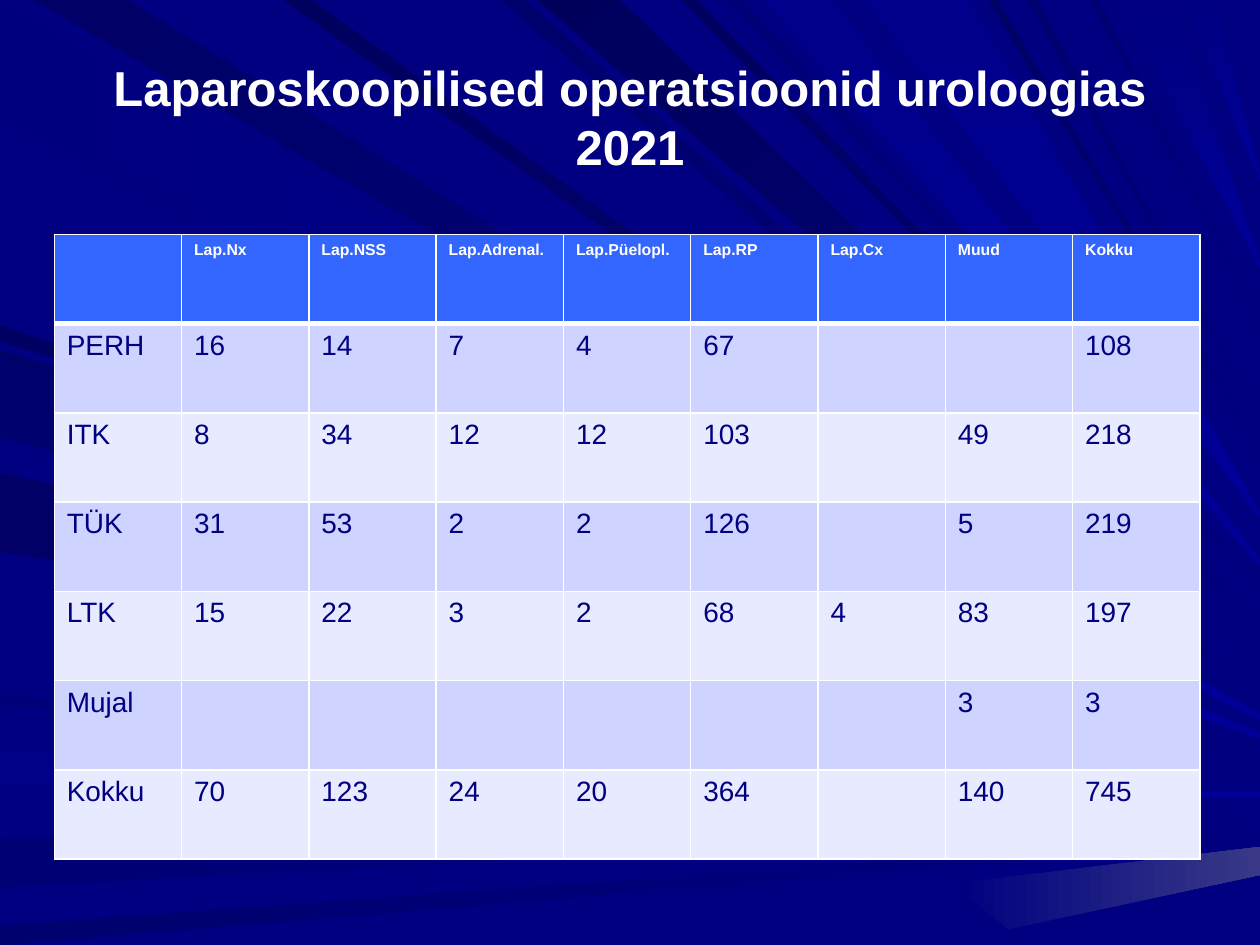
from dataclasses import dataclass
from lxml.etree import SubElement as Sub
from pptx import Presentation
from pptx.dml.color import RGBColor as RGB
from pptx.enum.text import MSO_ANCHOR as Anchor, PP_ALIGN as Align
from pptx.oxml.ns import qn
from pptx.util import Pt


@dataclass(frozen=True)
class Theme:
    font: str = "Arial"
    back: str = "000080"
    light: str = "000099"
    glow: str = "393987"
    white: str = "FFFFFF"
    head: str = "3366FF"
    bands: tuple = ("CED3FF", "E8EAFF")
    title: int = 28
    label: int = 9
    body: int = 16


THEME = Theme()
WIDE, HIGH, TIP = 720, 540, 3

RAYS = [
    ("left", 2, 67, 408, "00007E"),
    ("top", 19, 73, 403, "000067"),
    ("left", 429, 449, 453, "000088"),
    ("left", 479, 507, 465, "000075"),
    ("left", 529, 540, 477, "00006F"),
    ("left", 186, 195, 423, "000062"),
    ("left", 115, 164, 419, "000080"),
    ("top", 286, 300, 372, "00006D"),
    ("top", 307, 354, 354, "00005C"),
    ("top", 389, 398, 332, "000060"),
    ("top", 436, 476, 320, "00008A"),
    ("top", 639, 670, 150, "000080"),
    ("top", 676, 694, 100, "000083"),
    ("left", 200, 246, 430, "000069"),
    ("left", 270, 315, 434, "000067"),
    ("left", 398, 403, 446, "000077"),
    ("top", 162, 178, 394, "00005E"),
    ("top", 416, 424, 325, "000077"),
    ("top", 494, 554, 293, "00008A"),
    ("top", 565, 570, 256, "000065"),
    ("top", 587, 593, 240, "00006F"),
    ("top", 623, 628, 181, "000073"),
    ("left", 204, 250, 433, "00006F"),
]

GLOW = [(544, 505), (WIDE, 484), (WIDE, 500), (576, 531)]

ROWS = [
    ["", "Lap.Nx", "Lap.NSS", "Lap.Adrenal.", "Lap.Püelopl.", "Lap.RP", "Lap.Cx", "Muud", "Kokku"],
    ["PERH", "16", "14", "7", "4", "67", "", "", "108"],
    ["ITK", "8", "34", "12", "12", "103", "", "49", "218"],
    ["TÜK", "31", "53", "2", "2", "126", "", "5", "219"],
    ["LTK", "15", "22", "3", "2", "68", "4", "83", "197"],
    ["Mujal", "", "", "", "", "", "", "3", "3"],
    ["Kokku", "70", "123", "24", "20", "364", "", "140", "745"],
]


def color(code):
    return RGB.from_string(code)


def style(para, size, code, bold):
    font = para.font
    font.name, font.size, font.bold = THEME.font, Pt(size), bold
    font.color.rgb = color(code)


def add_shard(slide, points, start, end, angle):
    first, *rest = [(Pt(x), Pt(y)) for x, y in points]
    path = slide.shapes.build_freeform(*first)
    path.add_line_segments(rest, close=True)
    shard = path.convert_to_shape()
    shard.shadow.inherit = False
    shard.line.fill.background()
    shard.fill.gradient()
    shard.fill.gradient_angle = -angle % 360
    for stop, code in zip(shard.fill.gradient_stops, (start, end)):
        stop.color.rgb = color(code)


def add_ray(slide, side, near, far, tip, start):
    pale = start > "000077"
    end = THEME.light if pale else THEME.back
    tail = [(WIDE, tip), (WIDE, tip + TIP)]
    if side == "left":
        add_shard(slide, [(0, far), (0, near), *tail], start, end, 0)
    else:
        add_shard(slide, [(near, 0), (far, 0), *tail], start, end, 90 if pale else 45)


def add_title(slide, text):
    title = slide.shapes.title
    title.left, title.top, title.width, title.height = Pt(36), Pt(21.6), Pt(648), Pt(90)
    frame = title.text_frame
    frame.text = text
    frame.word_wrap = True
    frame.vertical_anchor = Anchor.MIDDLE
    para = frame.paragraphs[0]
    para.alignment = Align.CENTER
    style(para, THEME.title, THEME.white, True)
    title.element.getparent().append(title.element)


def add_edge(cell, side, width):
    line = Sub(cell._tc.get_or_add_tcPr(), qn(f"a:ln{side}"), w=str(Pt(width)))
    fill = Sub(line, qn("a:solidFill"))
    Sub(fill, qn("a:srgbClr"), val=THEME.white)


def fill_cell(cell, text, row):
    head = row == 0
    for side in "LRTB":
        thick = (head and side == "B") or (row == 1 and side == "T")
        add_edge(cell, side, 3 if thick else 1)
    cell.fill.solid()
    cell.fill.fore_color.rgb = color(THEME.head if head else THEME.bands[(row - 1) % 2])
    cell.text = text
    para = cell.text_frame.paragraphs[0]
    if head:
        style(para, THEME.label, THEME.white, True)
    else:
        style(para, THEME.body, THEME.back, False)


def add_grid(slide, rows, left, top, wide, high):
    count, span = len(rows), len(rows[0])
    frame = slide.shapes.add_table(count, span, Pt(left), Pt(top), Pt(wide * span), Pt(high * count))
    table = frame.table
    for col in table.columns:
        col.width = Pt(wide)
    for i, row in enumerate(rows):
        table.rows[i].height = Pt(high)
        for j, text in enumerate(row):
            fill_cell(table.cell(i, j), text, i)


def main():
    deck = Presentation()
    deck.slide_width, deck.slide_height = Pt(WIDE), Pt(HIGH)
    slide = deck.slides.add_slide(deck.slide_layouts[5])
    fill = slide.background.fill
    fill.solid()
    fill.fore_color.rgb = color(THEME.back)
    add_shard(slide, GLOW, THEME.back, THEME.glow, 0)
    for ray in RAYS:
        add_ray(slide, *ray)
    add_title(slide, "Laparoskoopilised operatsioonid uroloogias 2021")
    add_grid(slide, ROWS, 31, 134, 72.75, 51)
    deck.save("out.pptx")


if __name__ == "__main__":
    main()
